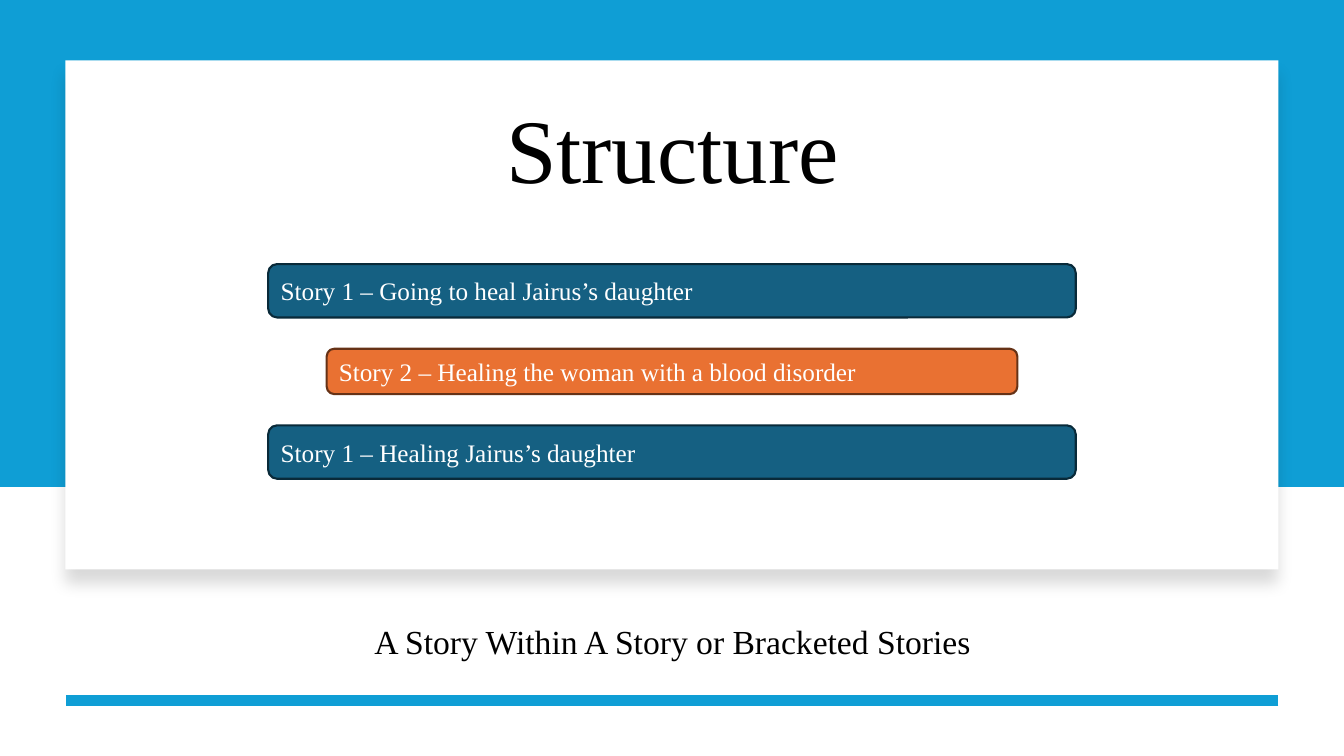
"""Build the Structure slide, showing one story bracketed by another."""
from lxml import etree
from pptx import Presentation
from pptx.dml.color import RGBColor
from pptx.enum import shapes, text
from pptx.oxml import ns
from pptx.util import Inches, Pt

SKY = RGBColor(0x0F, 0x9E, 0xD5)
WHITE = RGBColor(0xFF, 0xFF, 0xFF)
BLACK = RGBColor(0, 0, 0)
TEAL = RGBColor(0x15, 0x60, 0x82)
DARK_TEAL = RGBColor(0x09, 0x2A, 0x39)
ORANGE = RGBColor(0xE9, 0x71, 0x32)
BROWN = RGBColor(0x66, 0x32, 0x16)
SLIDE_WIDTH = 13.33


def write(holder, words, size, color, align, spacing=1.0, before=0):
    frame = holder.text_frame
    frame.word_wrap = True
    frame.vertical_anchor = text.MSO_ANCHOR.MIDDLE
    paragraph = frame.paragraphs[0]
    paragraph.alignment = align
    paragraph.line_spacing = spacing
    paragraph.space_before = Pt(before)
    run = paragraph.add_run()
    run.text = words
    run.font.name = "Times New Roman"
    run.font.size = Pt(size)
    run.font.color.rgb = color


def block(preset, left, top, width, height, fill, outline=None):
    shape = slide.shapes.add_shape(
        preset, Inches(left), Inches(top), Inches(width), Inches(height))
    shape.shadow.inherit = False
    shape.fill.solid()
    shape.fill.fore_color.rgb = fill
    if outline is None:
        shape.line.fill.background()
    else:
        shape.line.color.rgb = outline
        shape.line.width = Pt(1.5)
    return shape


deck = Presentation()
deck.slide_width = Inches(SLIDE_WIDTH)
deck.slide_height = Inches(7.5)
slide = deck.slides.add_slide(deck.slide_layouts[6])

RECTANGLE = shapes.MSO_SHAPE.RECTANGLE
block(RECTANGLE, 0, 0, SLIDE_WIDTH, 4.83, SKY)
card = block(RECTANGLE, 0.65, 0.6, 12.03, 5.05, WHITE)
effects = card._element.spPr.find(ns.qn("a:effectLst"))
shadow = etree.SubElement(effects, ns.qn("a:outerShdw"), blurRad=str(Pt(11)),
                          dist=str(Pt(10)), dir="5400000", algn="t", rotWithShape="0")
shade = etree.SubElement(shadow, ns.qn("a:srgbClr"), val="000000")
etree.SubElement(shade, ns.qn("a:alpha"), val="15000")

for words, top, height, size, before in (
    ("Structure", 0.97, 1.12, 64.8, 0),
    ("A Story Within A Story or Bracketed Stories", 6.03, 0.71, 24, 10),
):
    heading = slide.shapes.add_textbox(
        Inches(1.67), Inches(top), Inches(10), Inches(height))
    write(heading, words, size, BLACK, text.PP_ALIGN.CENTER, 0.9, before)

footer_rule = slide.shapes.add_connector(
    shapes.MSO_CONNECTOR.STRAIGHT, Inches(12.68), Inches(6.95), Inches(0.65), Inches(6.95))
footer_rule.line.color.rgb = SKY
footer_rule.line.width = Pt(8)
etree.SubElement(footer_rule._element.spPr, ns.qn("a:effectLst"))

for words, top, width, height, fill, outline in (
    ("Story 1 – Going to heal Jairus’s daughter", 2.62, 8.01, 0.53, TEAL, DARK_TEAL),
    ("Story 2 – Healing the woman with a blood disorder", 3.46, 6.85, 0.45, ORANGE, BROWN),
    ("Story 1 – Healing Jairus’s daughter", 4.22, 8.01, 0.53, TEAL, DARK_TEAL),
):
    story = block(shapes.MSO_SHAPE.ROUNDED_RECTANGLE, (SLIDE_WIDTH - width) / 2, top,
                  width, height, fill, outline)
    write(story, words, 18, WHITE, text.PP_ALIGN.LEFT)

deck.save("out.pptx")
